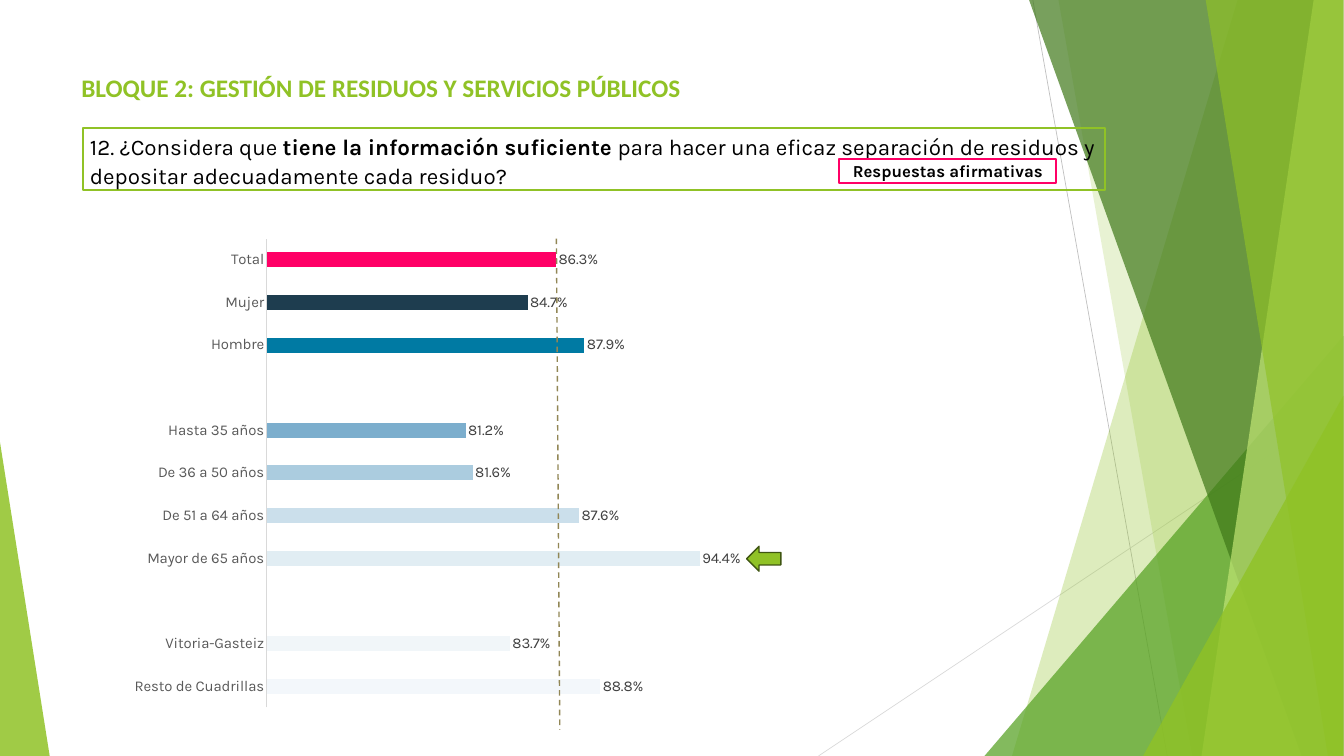
from dataclasses import dataclass
from typing import Optional

from lxml import etree
from pptx import Presentation
from pptx import slide as sl
from pptx import util as u
from pptx.chart import data as cd
from pptx.dml import color as col
from pptx.enum import chart as ch
from pptx.enum import dml, shapes, text
from pptx.oxml import ns
from pptx.shapes import base

Inches, Pt = u.Inches, u.Pt


@dataclass(frozen=True)
class Theme:
    green: str = "90C226"
    forest: str = "54A021"
    moss: str = "3F7819"
    lime: str = "C0E474"
    arrow_edge: str = "3F5511"
    pink: str = "FF0066"
    white: str = "FFFFFF"
    black: str = "000000"
    axis_text: str = "595959"
    label_text: str = "404040"
    axis_line: str = "D9D9D9"
    thin_line: str = "BFBFBF"
    reference: str = "918655"
    heading_font: str = "Calibri"
    body_font: str = "Karla"
    heading_size: int = 27
    question_size: int = 24
    tag_size: int = 18
    chart_size: int = 16


THEME = Theme()


@dataclass(frozen=True)
class Facet:
    points: tuple
    color: str
    opacity: int


@dataclass(frozen=True)
class Line:
    start: tuple
    end: tuple
    color: str
    width: float
    dashed: bool = False


@dataclass(frozen=True)
class Bar:
    category: str
    value: Optional[float] = None
    color: Optional[str] = None


TOP, BOTTOM, RIGHT = -0.01, 11.25, 19.99


def band(top_left: float, bottom_left: float, color: str, opacity: int) -> Facet:
    return Facet(((top_left, TOP), (RIGHT, TOP), (RIGHT, BOTTOM), (bottom_left, BOTTOM)),
                 color, opacity)


def wedge(left: float, top: float, color: str, opacity: int) -> Facet:
    return Facet(((left, BOTTOM), (RIGHT, top), (RIGHT, BOTTOM)), color, opacity)


BACKGROUND_LINES = (
    Line((15.37, 0), (17.37, 11.25), THEME.thin_line, 0.75),
    Line((19.99, 6.04), (12.18, 11.25), THEME.axis_line, 0.75),
)
FACETS = (
    band(18.42, 15.06, THEME.green, 30),
    band(15.75, 17.74, THEME.green, 20),
    wedge(14.65, 5, THEME.forest, 72),
    band(15.31, 19.37, THEME.moss, 70),
    band(19.55, 17.88, THEME.lime, 70),
    band(17.94, 19.76, THEME.green, 65),
    wedge(17.01, 5.89, THEME.green, 80),
    Facet(((0, 6.58), (0.74, BOTTOM), (0, BOTTOM)), THEME.green, 85),
)
BARS = (
    Bar("Resto de Cuadrillas", 0.888, "F3F7FB"),
    Bar("Vitoria-Gasteiz", 0.837, "F1F6F9"),
    Bar(""),
    Bar("Mayor de 65 años", 0.944, "E1EDF3"),
    Bar("De 51 a 64 años", 0.876, "CBDFEB"),
    Bar("De 36 a 50 años", 0.816, "ABCCDF"),
    Bar("Hasta 35 años", 0.812, "7CAECD"),
    Bar(""),
    Bar("Hombre", 0.879, "007AA3"),
    Bar("Mujer", 0.847, "1E3D4F"),
    Bar("Total", 0.863, THEME.pink),
)


def rgb(value: str) -> col.RGBColor:
    return col.RGBColor.from_string(value)


def set_font(font, *, size: int, color: str, name: str = THEME.body_font,
             bold: bool = False) -> None:
    font.size, font.name, font.bold = Pt(size), name, bold
    font.color.rgb = rgb(color)


def write_text(shape: base.BaseShape, *runs: tuple, size: int, color: str = THEME.black,
               name: str = THEME.body_font, align=text.PP_ALIGN.LEFT,
               anchor=text.MSO_ANCHOR.TOP, fit=text.MSO_AUTO_SIZE.NONE,
               line_spacing: float = 1.0, space_after: float = 0,
               margins: tuple = (0.1, 0.05)) -> None:
    frame = shape.text_frame
    frame.word_wrap, frame.auto_size, frame.vertical_anchor = True, fit, anchor
    frame.margin_left = frame.margin_right = Inches(margins[0])
    frame.margin_top = frame.margin_bottom = Inches(margins[1])
    paragraph = frame.paragraphs[0]
    paragraph.alignment, paragraph.line_spacing = align, line_spacing
    paragraph.space_before, paragraph.space_after = Pt(0), Pt(space_after)
    for words, bold in runs:
        run = paragraph.add_run()
        run.text = words
        set_font(run.font, size=size, color=color, name=name, bold=bold)


def add_line(slide: sl.Slide, line: Line) -> None:
    connector = slide.shapes.add_connector(
        shapes.MSO_CONNECTOR.STRAIGHT, *map(Inches, line.start + line.end))
    connector.line.color.rgb = rgb(line.color)
    connector.line.width = Pt(line.width)
    if line.dashed:
        connector.line.dash_style = dml.MSO_LINE.DASH
    etree.SubElement(connector._element.spPr, ns.qn("a:effectLst"))


def add_facet(slide: sl.Slide, facet: Facet) -> None:
    corners = [(Inches(x), Inches(y)) for x, y in facet.points]
    builder = slide.shapes.build_freeform(*corners[0])
    builder.add_line_segments(corners[1:], close=True)
    shape = builder.convert_to_shape()
    shape.shadow.inherit = False
    shape.line.fill.background()
    shape.fill.solid()
    shape.fill.fore_color.rgb = rgb(facet.color)
    color = shape._element.spPr.find(".//" + ns.qn("a:srgbClr"))
    etree.SubElement(color, ns.qn("a:alpha"), val=str(facet.opacity * 1000))


def add_box(slide: sl.Slide, kind, place: tuple, *, line: str, width: float,
            fill: Optional[str] = None) -> base.BaseShape:
    shape = slide.shapes.add_shape(kind, *map(Inches, place))
    shape.shadow.inherit = False
    shape.line.color.rgb, shape.line.width = rgb(line), Pt(width)
    if fill:
        shape.fill.solid()
        shape.fill.fore_color.rgb = rgb(fill)
    else:
        shape.fill.background()
    return shape


def place_plot(chart, x: float, y: float, w: float, h: float) -> None:
    area = chart._chartSpace.chart.plotArea
    for old in area.findall(ns.qn("c:layout")):
        area.remove(old)
    layout = etree.Element(ns.qn("c:layout"))
    manual = etree.SubElement(layout, ns.qn("c:manualLayout"))
    settings = dict(layoutTarget="inner", xMode="edge", yMode="edge", x=x, y=y, w=w, h=h)
    for key, value in settings.items():
        etree.SubElement(manual, ns.qn("c:" + key), val=str(value))
    area.insert(0, layout)


def add_bar_chart(slide: sl.Slide, bars: tuple) -> None:
    data = cd.CategoryChartData(number_format="0.0%")
    data.categories = [bar.category for bar in bars]
    data.add_series("Series 1", [bar.value for bar in bars])
    chart = slide.shapes.add_chart(
        ch.XL_CHART_TYPE.BAR_CLUSTERED, *map(Inches, (1.25, 3.23, 15.2, 7.61)), data).chart
    chart.has_legend = chart.has_title = False
    set_font(chart.font, size=THEME.chart_size, color=THEME.black)
    values, categories = chart.value_axis, chart.category_axis
    values.minimum_scale, values.maximum_scale = 0.7, 1.0
    values.has_major_gridlines = values.visible = False
    categories.major_tick_mark = ch.XL_TICK_MARK.NONE
    categories.format.line.color.rgb = rgb(THEME.axis_line)
    categories.format.line.width = Pt(0.75)
    set_font(categories.tick_labels.font, size=THEME.chart_size, color=THEME.axis_text)
    plot = chart.plots[0]
    plot.gap_width, plot.vary_by_categories = 182, False
    series = plot.series[0]
    series.format.fill.solid()
    series.format.fill.fore_color.rgb = rgb(THEME.green)
    for index, bar in enumerate(bars):
        if bar.color:
            fill = series.points[index].format.fill
            fill.solid()
            fill.fore_color.rgb = rgb(bar.color)
    labels = series.data_labels
    labels.show_value, labels.position = True, ch.XL_LABEL_POSITION.OUTSIDE_END
    labels.number_format, labels.number_format_is_linked = "0.0%", False
    set_font(labels.font, size=THEME.chart_size, color=THEME.label_text)
    place_plot(chart, 0.179, 0.042, 0.521, 0.917)


def main() -> None:
    presentation = Presentation()
    presentation.slide_width, presentation.slide_height = Inches(20), Inches(11.25)
    slide = presentation.slides.add_slide(presentation.slide_layouts[5])
    for line in BACKGROUND_LINES:
        add_line(slide, line)
    for facet in FACETS:
        add_facet(slide, facet)
    add_bar_chart(slide, BARS)

    kinds = shapes.MSO_SHAPE
    question = add_box(slide, kinds.RECTANGLE, (1.24, 1.9, 15.2, 0.93),
                       line=THEME.green, width=2.25)
    write_text(question, ("12. ¿Considera que ", False),
               ("tiene la información suficiente ", True),
               ("para hacer una eficaz separación de residuos y depositar "
                "adecuadamente cada residuo?", False),
               size=THEME.question_size, line_spacing=1.07, space_after=12,
               fit=text.MSO_AUTO_SIZE.SHAPE_TO_FIT_TEXT)
    tag = add_box(slide, kinds.RECTANGLE, (12.49, 2.37, 3.23, 0.35),
                  line=THEME.pink, width=2.25, fill=THEME.white)
    write_text(tag, ("Respuestas afirmativas", True), size=THEME.tag_size,
               align=text.PP_ALIGN.CENTER, anchor=text.MSO_ANCHOR.MIDDLE,
               margins=(0.15, 0.07))
    add_line(slide, Line((8.28, 3.55), (8.33, 10.86), THEME.reference, 1.5, dashed=True))

    title = slide.shapes.title
    title.left, title.top, title.width, title.height = map(Inches, (1.11, 1, 14.1, 2.17))
    write_text(title, ("BLOQUE 2: GESTIÓN DE RESIDUOS Y SERVICIOS PÚBLICOS", True),
               size=THEME.heading_size, color=THEME.green, name=THEME.heading_font,
               line_spacing=1.07, space_after=12)
    add_box(slide, kinds.LEFT_ARROW, (11.11, 8.13, 0.51, 0.37),
            line=THEME.arrow_edge, width=1.5, fill=THEME.green)
    presentation.save("out.pptx")


if __name__ == "__main__":
    main()
